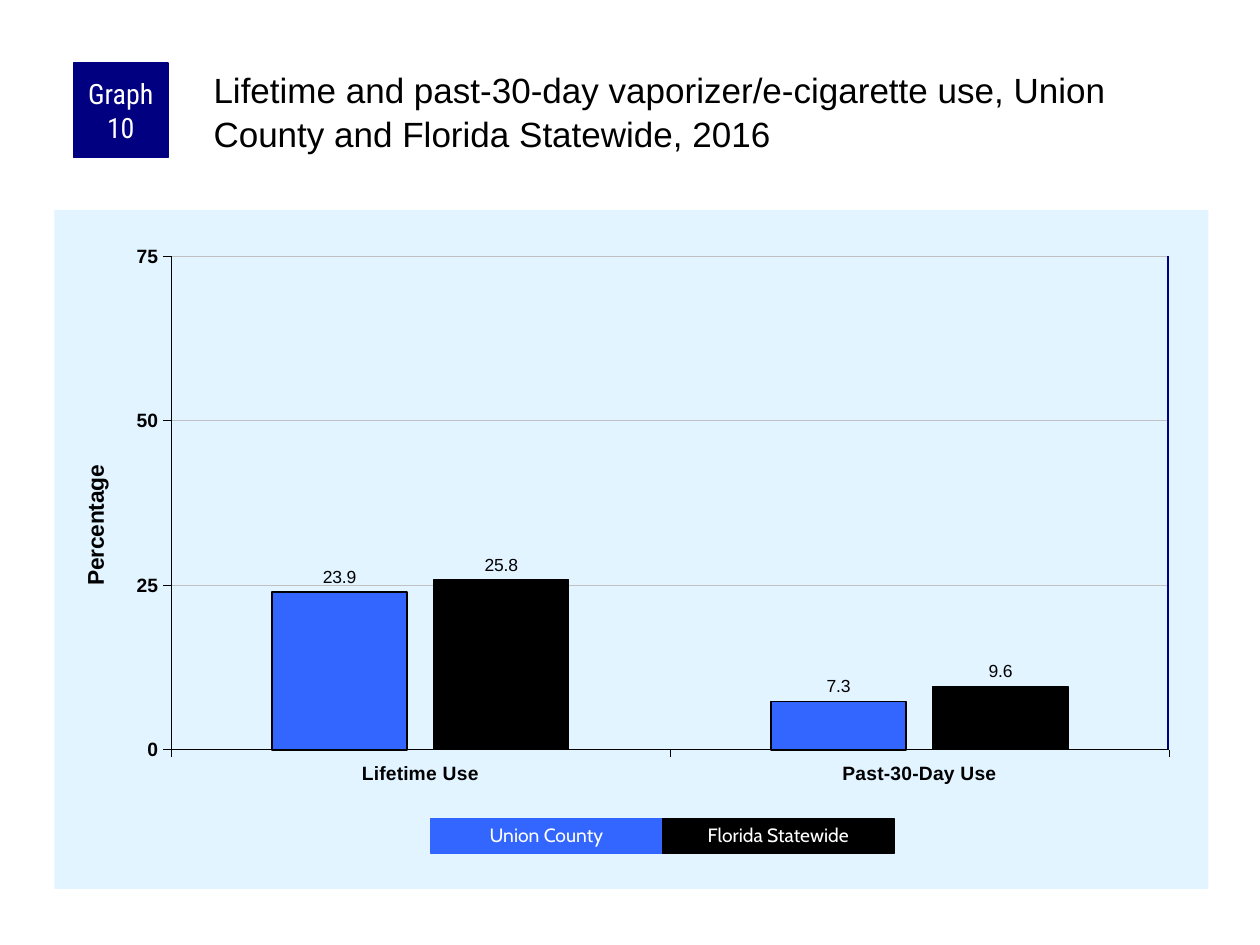
from lxml import etree
from pptx import Presentation
from pptx import util as u
from pptx.chart.data import CategoryChartData
from pptx.dml.color import RGBColor
from pptx.enum import chart as charts, shapes, text
from pptx.oxml import parse_xml
from pptx.oxml.ns import nsdecls, qn

Pt = u.Pt
NAVY = RGBColor(0x00, 0x00, 0x80)
BLUE = RGBColor(0x33, 0x66, 0xFF)
BLACK = RGBColor(0x00, 0x00, 0x00)
WHITE = RGBColor(0xFF, 0xFF, 0xFF)
GREY = RGBColor(0xC0, 0xC0, 0xC0)
PALE_BLUE = RGBColor(0xE1, 0xF4, 0xFF)
SERIES = [
    ("Union County", (23.9, 7.3), BLUE, 1),
    ("Florida Statewide", (25.8, 9.6), BLACK, 0.75),
]


def style_font(font, name, size, color, bold=False):
    font.name = name
    font.size = Pt(size)
    font.bold = bold
    font.color.rgb = color


def place_manually(parent, index, **settings):
    for old in parent.findall(qn("c:layout")):
        parent.remove(old)
    entries = "".join(f'<c:{key} val="{value}"/>' for key, value in settings.items())
    parent.insert(index, parse_xml(
        f'<c:layout {nsdecls("c")}><c:manualLayout>{entries}</c:manualLayout></c:layout>'))


presentation = Presentation()
presentation.slide_width, presentation.slide_height = Pt(720), Pt(540)
slide = presentation.slides.add_slide(presentation.slide_layouts[5])

chart_data = CategoryChartData(number_format="0.0")
chart_data.categories = ["Lifetime Use", "Past-30-Day Use"]
for name, values, color, line_width in SERIES:
    chart_data.add_series(name, values)
chart = slide.shapes.add_chart(
    charts.XL_CHART_TYPE.COLUMN_CLUSTERED,
    Pt(31), Pt(120), Pt(659.5), Pt(388), chart_data).chart
chart.has_legend = False
chart.has_title = False
style_font(chart.font, "Arial", 11.5, BLACK)
chart_space = chart.element
chart_space.find(qn("c:chart")).addnext(parse_xml(
    f'<c:spPr {nsdecls("c", "a")}><a:solidFill><a:srgbClr val="{PALE_BLUE}"/></a:solidFill>'
    '<a:ln><a:noFill/></a:ln></c:spPr>'))
plot_area = chart_space.find(".//" + qn("c:plotArea"))
place_manually(plot_area, 0, layoutTarget="inner", xMode="edge", yMode="edge",
               x=0.101, y=0.068, w=0.865, h=0.727)

plot = chart.plots[0]
plot.gap_width = 150
plot.overlap = -20
plot.vary_by_categories = False
for series, (name, values, color, line_width) in zip(plot.series, SERIES):
    series.format.fill.solid()
    series.format.fill.fore_color.rgb = color
    series.format.line.color.rgb = BLACK
    series.format.line.width = Pt(line_width)
    labels = series.data_labels
    labels.show_value = True
    labels.number_format = "0.0"
    labels.number_format_is_linked = False
    labels.position = charts.XL_LABEL_POSITION.OUTSIDE_END
    style_font(labels.font, "Arial", 10, BLACK)

value_axis = chart.value_axis
for axis in (chart.category_axis, value_axis):
    axis.major_tick_mark = charts.XL_TICK_MARK.OUTSIDE
    axis.minor_tick_mark = charts.XL_TICK_MARK.NONE
    axis.format.line.color.rgb = BLACK
    axis.format.line.width = Pt(0.25)
    style_font(axis.tick_labels.font, "Arial", 11, BLACK, bold=True)
value_axis.minimum_scale = 0
value_axis.maximum_scale = 75
value_axis.major_unit = 25
value_axis.tick_labels.number_format = "0"
value_axis.tick_labels.number_format_is_linked = False
value_axis.has_major_gridlines = True
value_axis.major_gridlines.format.line.color.rgb = GREY
value_axis.major_gridlines.format.line.width = Pt(0.25)

axis_title = value_axis.axis_title
axis_title.text_frame.text = "Percentage"
style_font(axis_title.text_frame.paragraphs[0].runs[0].font, "Arial", 13, BLACK, bold=True)
title_element = plot_area.find(qn("c:valAx")).find(qn("c:title"))
body_properties = title_element.find(".//" + qn("a:bodyPr"))
body_properties.set("rot", "-5400000")
body_properties.set("vert", "horz")
place_manually(title_element, 1, xMode="edge", yMode="edge", x=0.02, y=0.37)

right_edge = slide.shapes.add_connector(
    shapes.MSO_CONNECTOR.STRAIGHT, Pt(667.5), Pt(146.5), Pt(667.5), Pt(428))
right_edge.line.color.rgb = NAVY
right_edge.line.width = Pt(1)
etree.SubElement(right_edge._element.spPr, qn("a:effectLst"))

title = slide.shapes.title
title.left, title.top, title.width, title.height = Pt(120), Pt(36), Pt(570), Pt(60)
frame = title.text_frame
frame.text = ("Lifetime and past-30-day vaporizer/e-cigarette use, "
              "Union County and Florida Statewide, 2016")
frame.word_wrap = True
frame.auto_size = text.MSO_AUTO_SIZE.NONE
frame.vertical_anchor = text.MSO_ANCHOR.TOP
frame.margin_left = frame.margin_top = Pt(2)
frame.margin_right = frame.margin_bottom = 0
paragraph = frame.paragraphs[0]
paragraph.alignment = text.PP_ALIGN.LEFT
paragraph.line_spacing = 1.05
style_font(paragraph.runs[0].font, "Arial", 20, BLACK)

boxes = [("Graph 10", 42, 36, 54, 54, NAVY, "Roboto Condensed", 16, 1)]
for index, (name, values, color, line_width) in enumerate(SERIES):
    boxes.append((name, 246 + index * 132.5, 468, 132.5, 19.5, color, "Cabin", 11, 0.9))
for label, left, top, width, height, color, font_name, size, spacing in boxes:
    box = slide.shapes.add_shape(
        shapes.MSO_SHAPE.RECTANGLE, Pt(left), Pt(top), Pt(width), Pt(height))
    box.shadow.inherit = False
    box.fill.solid()
    box.fill.fore_color.rgb = color
    box.line.color.rgb = color
    box.line.width = Pt(0.75)
    frame = box.text_frame
    frame.text = label
    frame.word_wrap = True
    frame.vertical_anchor = text.MSO_ANCHOR.MIDDLE
    frame.margin_left = frame.margin_right = Pt(3.6)
    frame.margin_top = frame.margin_bottom = 0
    paragraph = frame.paragraphs[0]
    paragraph.alignment = text.PP_ALIGN.CENTER
    paragraph.line_spacing = spacing
    style_font(paragraph.runs[0].font, font_name, size, WHITE)

presentation.save("out.pptx")
